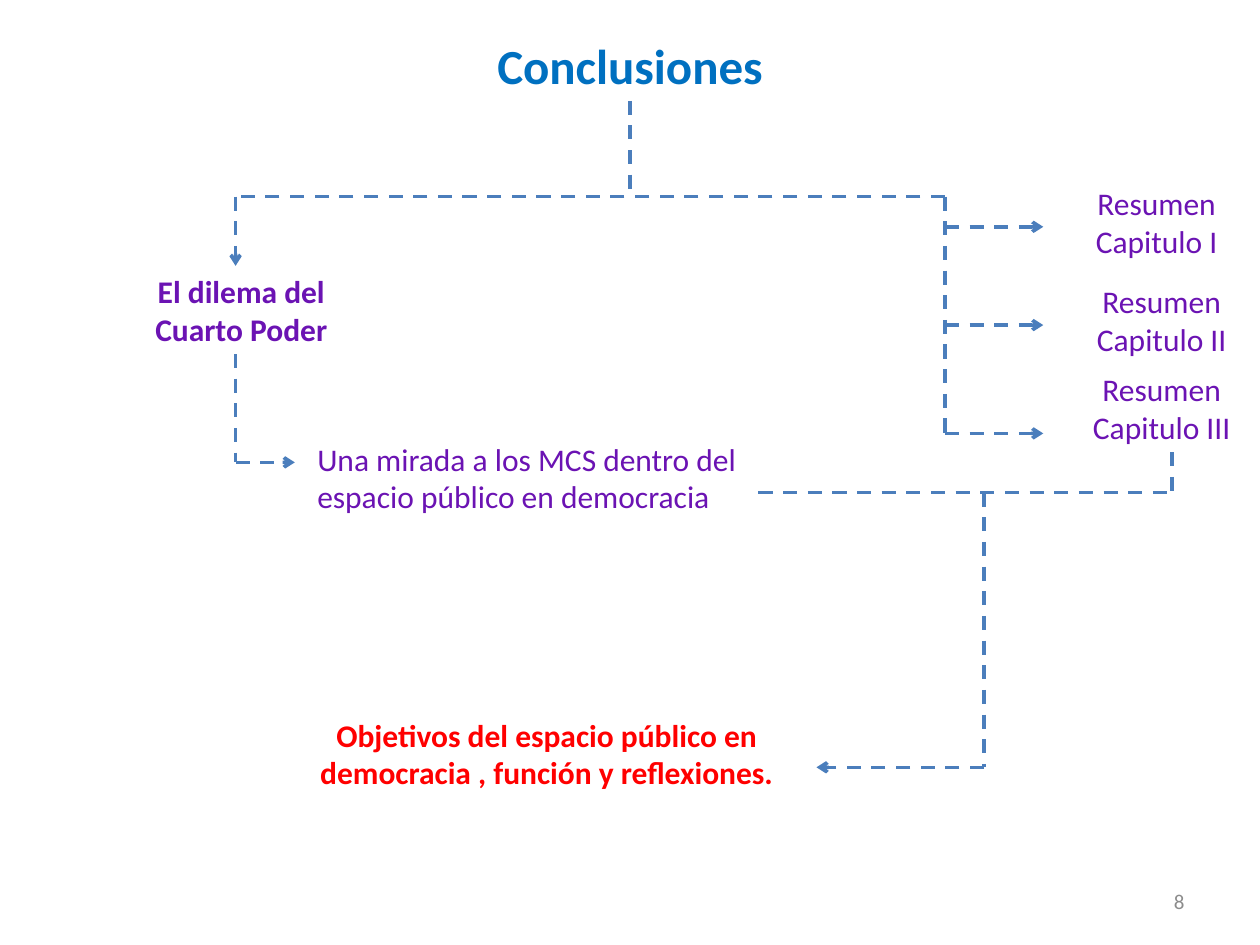
from lxml import etree
from pptx import Presentation, util as u
from pptx.dml.color import RGBColor
from pptx.enum import dml, shapes, text
from pptx.oxml.ns import qn

THEME = dict(font="Calibri", title="0070C0", body="6B13B3", goal="FF0000",
             number="8C8C8C", line="4B7EBC", title_size=28, body_size=18,
             number_size=12, line_width=2)

TITLE = ("Conclusiones", (0, 0.23, 10, 0.57))
LABELS = [
    ("El dilema del Cuarto Poder", (0.94, 2.11, 1.95, 0.71), dict(bold=True)),
    ("Una mirada a los MCS dentro del espacio público en democracia",
     (2.42, 3.44, 3.83, 0.71), dict(align="LEFT")),
    ("Resumen Capitulo I", (8.36, 1.41, 1.64, 0.71), {}),
    ("Resumen Capitulo II", (8.44, 2.19, 1.56, 0.71), {}),
    ("Resumen Capitulo III", (8.44, 2.89, 1.56, 0.71), {}),
    ("Objetivos del espacio público en democracia , función y reflexiones.",
     (2.19, 5.63, 4.3, 1.01), dict(bold=True, color="goal")),
    ("8", (7.17, 6.95, 2.33, 0.4),
     dict(align="RIGHT", anchor="MIDDLE", color="number", size="number_size")),
]

LEFT_X, MID_X, RIGHT_X, GOAL_X, SUMMARY_X = 1.87, 5, 7.5, 7.81, 9.3
BRANCH_Y, DILEMMA_Y, VIEW_Y, JOIN_Y, GOAL_Y = 1.56, 2.11, 3.67, 3.91, 6.09
CHAPTER_YS = [1.8, 2.58, 3.44]
LINES = [
    (RIGHT_X, BRANCH_Y, LEFT_X, BRANCH_Y),
    (RIGHT_X, BRANCH_Y, RIGHT_X, CHAPTER_YS[-1]),
    (LEFT_X, 2.81, LEFT_X, VIEW_Y),
    (6.02, JOIN_Y, SUMMARY_X, JOIN_Y),
    (SUMMARY_X, 3.59, SUMMARY_X, JOIN_Y),
    (GOAL_X, JOIN_Y, GOAL_X, GOAL_Y),
]
ARROWS = [
    (LEFT_X, BRANCH_Y, LEFT_X, DILEMMA_Y),
    (LEFT_X, VIEW_Y, 2.34, VIEW_Y),
    (GOAL_X, GOAL_Y, 6.48, GOAL_Y),
] + [(RIGHT_X, y, 8.28, y) for y in CHAPTER_YS]


def write(sp, content, box, color="body", size="body_size", bold=False,
          align="CENTER", anchor="TOP"):
    sp.left, sp.top, sp.width, sp.height = map(u.Inches, box)
    tf = sp.text_frame
    tf.word_wrap = True
    tf.auto_size = text.MSO_AUTO_SIZE.NONE
    tf.vertical_anchor = getattr(text.MSO_ANCHOR, anchor)
    tf.margin_left = tf.margin_right = u.Inches(0.1)
    tf.margin_top = tf.margin_bottom = u.Inches(0.05)
    p = tf.paragraphs[0]
    p.alignment = getattr(text.PP_ALIGN, align)
    r = p.add_run()
    r.text = content
    r.font.name = THEME["font"]
    r.font.size = u.Pt(THEME[size])
    r.font.bold = bold
    r.font.color.rgb = RGBColor.from_string(THEME[color])


def connect(s, ends, arrow=False):
    c = s.shapes.add_connector(shapes.MSO_CONNECTOR.STRAIGHT, *map(u.Inches, ends))
    c.line.color.rgb = RGBColor.from_string(THEME["line"])
    c.line.width = u.Pt(THEME["line_width"])
    c.line.dash_style = dml.MSO_LINE.DASH
    if arrow:
        etree.SubElement(c.line._get_or_add_ln(), qn("a:tailEnd"), type="arrow")
    etree.SubElement(c._element.spPr, qn("a:effectLst"))
    return c


def main():
    prs = Presentation()
    prs.slide_width, prs.slide_height = u.Inches(10), u.Inches(7.5)
    s = prs.slides.add_slide(prs.slide_layouts[5])
    title = s.shapes.title
    write(title, *TITLE, color="title", size="title_size", bold=True)
    stem = connect(s, (MID_X, 0.8, MID_X, BRANCH_Y))
    stem.begin_connect(title, 2)
    for ends in LINES:
        connect(s, ends)
    for ends in ARROWS:
        connect(s, ends, arrow=True)
    for content, box, style in LABELS:
        write(s.shapes.add_textbox(0, 0, 0, 0), content, box, **style)
    prs.save("out.pptx")


if __name__ == "__main__":
    main()
